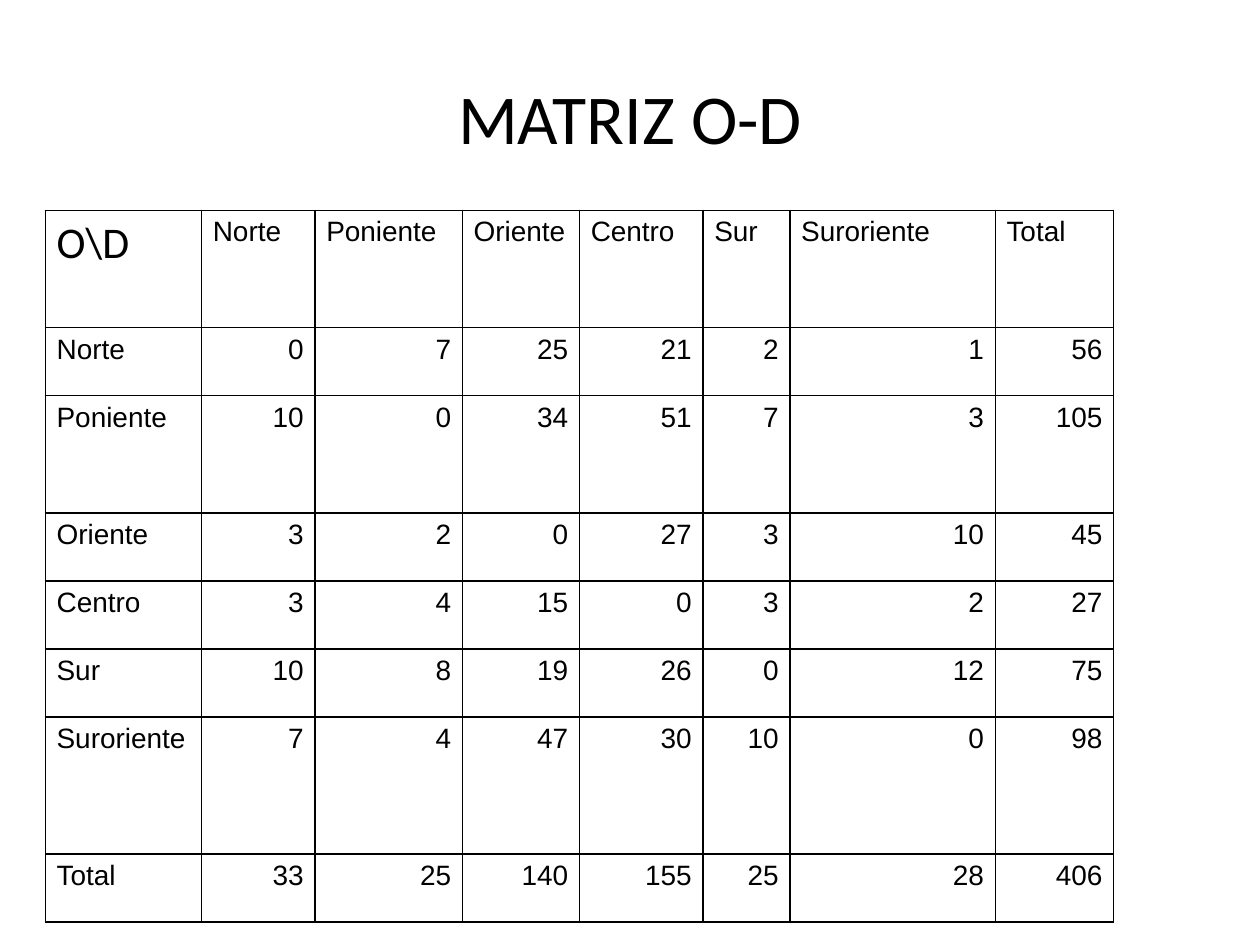
from dataclasses import dataclass

from lxml.etree import SubElement as Sub
from pptx import Presentation
from pptx.dml.color import RGBColor as Rgb
from pptx.enum.text import MSO_ANCHOR as Anchor, PP_ALIGN as Align
from pptx.oxml.ns import qn
from pptx.util import Inches, Pt

HUES = {"ink": "000000", "page": "FFFFFF"}
ZONES = ["Norte", "Poniente", "Oriente", "Centro", "Sur", "Suroriente", "Total"]
WIDTHS = [1.24, 0.9, 1.17, 0.93, 0.98, 0.69, 1.63, 0.94]


@dataclass
class Row:
    name: str
    trips: list[int]
    height: float = 0.54


ROWS = [
    Row("Norte", [0, 7, 25, 21, 2, 1, 56]),
    Row("Poniente", [10, 0, 34, 51, 7, 3, 105], 0.93),
    Row("Oriente", [3, 2, 0, 27, 3, 10, 45]),
    Row("Centro", [3, 4, 15, 0, 3, 2, 27]),
    Row("Sur", [10, 8, 19, 26, 0, 12, 75]),
    Row("Suroriente", [7, 4, 47, 30, 10, 0, 98], 1.09),
    Row("Total", [33, 25, 140, 155, 25, 28, 406]),
]
HEAD = 0.93


def write(frame, text: str, *, size: float = 16, font: str = "Arial",
          align=Align.LEFT) -> None:
    par = frame.paragraphs[0]
    par.alignment = align
    run = par.add_run()
    run.text = text
    run.font.size = Pt(size)
    run.font.name = font
    run.font.color.rgb = Rgb.from_string(HUES["ink"])


def border(cell, width: float = 1) -> None:
    props = cell._tc.get_or_add_tcPr()
    for spot, side in enumerate(("lnL", "lnR", "lnT", "lnB")):
        line = Sub(props, qn(f"a:{side}"), w=str(Pt(width)))
        fill = Sub(line, qn("a:solidFill"))
        Sub(fill, qn("a:srgbClr"), val=HUES["ink"])
        props.insert(spot, line)  # borders come before the fill


def fill_cell(cell, text: str, **form) -> None:
    cell.margin_left = cell.margin_right = Inches(0.09)
    cell.margin_top = cell.margin_bottom = Inches(0.05)
    cell.fill.solid()
    cell.fill.fore_color.rgb = Rgb.from_string(HUES["page"])
    write(cell.text_frame, text, **form)
    border(cell)


def add_title(slide, text: str) -> None:
    box = slide.shapes.add_textbox(Inches(0.5), Inches(0.3), Inches(9), Inches(1.25))
    frame = box.text_frame
    frame.word_wrap = True
    frame.vertical_anchor = Anchor.MIDDLE
    frame.margin_left = frame.margin_right = 0
    frame.margin_top = frame.margin_bottom = 0
    write(frame, text, size=40, font="Calibri", align=Align.CENTER)


def add_matrix(slide) -> None:
    tall = [HEAD] + [row.height for row in ROWS]
    grid = slide.shapes.add_table(
        len(tall), len(WIDTHS), Inches(0.36), Inches(1.67),
        Inches(sum(WIDTHS)), Inches(sum(tall))).table
    grid.first_row = grid.horz_banding = False
    for col, width in zip(grid.columns, WIDTHS):
        col.width = Inches(width)
    for line, height in zip(grid.rows, tall):
        line.height = Inches(height)

    # Header row
    fill_cell(grid.cell(0, 0), "O\\D", size=25, font="Calibri")
    for c, zone in enumerate(ZONES, 1):
        fill_cell(grid.cell(0, c), zone)

    # Trips by origin
    for r, row in enumerate(ROWS, 1):
        fill_cell(grid.cell(r, 0), row.name)
        for c, trip in enumerate(row.trips, 1):
            fill_cell(grid.cell(r, c), str(trip), align=Align.RIGHT)


def main() -> None:
    deck = Presentation()
    deck.slide_width, deck.slide_height = Inches(10), Inches(7.5)
    slide = deck.slides.add_slide(deck.slide_layouts[6])
    add_title(slide, "MATRIZ O-D")
    add_matrix(slide)
    deck.save("out.pptx")


if __name__ == "__main__":
    main()
